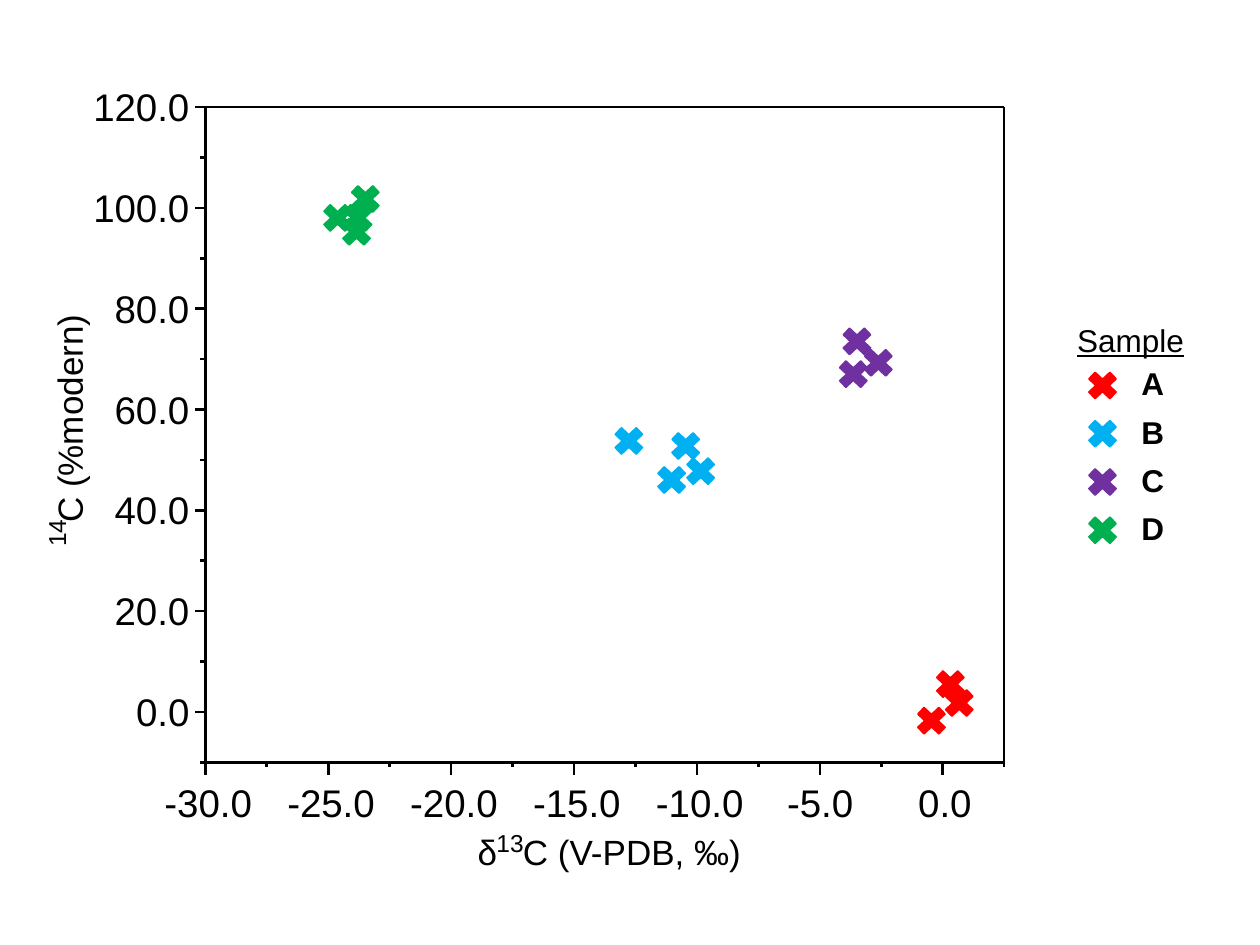
import lxml.etree
import pptx
import pptx.dml.color
import pptx.enum.shapes
import pptx.oxml.ns
import pptx.util

INCH = pptx.util.Inches
SHAPES = pptx.enum.shapes

# Axis ranges: low, high
SPAN_X = (-30, 2.5)
SPAN_Y = (-10, 120)

# Sample name, colour, points as (d13C, 14C)
SAMPLES = [
    ("A", "FF0000", [(-0.46, -1.75), (0.31, 5.5), (0.67, 1.75)]),
    ("B", "00B0F0", [(-11.03, 46), (-10.46, 52.75), (-9.85, 47.75), (-12.77, 53.75)]),
    ("C", "7030A0", [(-3.49, 73.5), (-2.62, 69.25), (-3.64, 67)]),
    ("D", "00B050", [(-24.62, 98), (-23.85, 95.25), (-23.79, 98), (-23.49, 101.75)]),
]


def paint(color, code):
    color.rgb = pptx.dml.color.RGBColor.from_string(code)


def add_run(para, text, size, bold=False, under=False):
    run = para.add_run()
    run.text = text
    font = run.font
    font.name, font.size = "Arial", pptx.util.Pt(size)
    font.bold, font.underline = bold, under
    paint(font.color, "000000")


def add_box(parts, box, inset=0):
    shape = parts.add_textbox(*map(INCH, box))
    frame = shape.text_frame
    frame.word_wrap = True
    frame.margin_left = frame.margin_right = INCH(inset)
    frame.margin_top = frame.margin_bottom = INCH(inset / 2)
    return shape


def add_label(parts, box, text, size, turn=0):
    shape = add_box(parts, box)
    shape.rotation = turn
    add_run(shape.text_frame.paragraphs[0], text, size)


def add_line(parts, x1, y1, x2, y2):
    line = parts.add_connector(SHAPES.MSO_CONNECTOR.STRAIGHT, *map(INCH, (x1, y1, x2, y2)))
    paint(line.line.color, "000000")
    line.line.width = pptx.util.Pt(1.5)
    lxml.etree.SubElement(line._element.spPr, pptx.oxml.ns.qn("a:effectLst"))


def add_mark(parts, x, y, code):
    wide, high = 0.32, 0.3
    mark = parts.add_shape(SHAPES.MSO_SHAPE.MATH_MULTIPLY, INCH(x - wide / 2),
                           INCH(y - high / 2), INCH(wide), INCH(high))
    mark.shadow.inherit = False
    mark.fill.solid()
    paint(mark.fill.fore_color, code)
    paint(mark.line.color, code)
    mark.line.width = pptx.util.Pt(1)


def scale_x(box, value):
    return box[0] + box[2] * (value - SPAN_X[0]) / (SPAN_X[1] - SPAN_X[0])


def scale_y(box, value):
    return box[1] + box[3] * (SPAN_Y[1] - value) / (SPAN_Y[1] - SPAN_Y[0])


def draw_axes(parts, box):
    left, top, wide, high = box
    right, base = left + wide, top + high

    # Frame
    for y in (base, top):
        add_line(parts, left, y, right, y)
    for x in (left, right):
        add_line(parts, x, base, x, top)

    # Horizontal axis: minor ticks halfway between major ones
    for value in range(-30, 5, 5):
        x, minor = scale_x(box, value), scale_x(box, value + 2.5)
        add_line(parts, x, base, x, base + 0.1)
        add_line(parts, minor, base, minor, base + 0.04)
        text = f"{value:.1f}"
        size = len(text)
        add_label(parts, (x - 0.065 * size, base + 0.13, 0.14 * size + 0.13, 0.41), text, 22)

    # Vertical axis
    for value in range(0, 140, 20):
        y, minor = scale_y(box, value), scale_y(box, value - 10)
        add_line(parts, left, y, left - 0.08, y)
        add_line(parts, left, minor, left - 0.04, minor)
        text = f"{value:.1f}"
        room = 0.17 * len(text) + 0.04
        add_label(parts, (left - room, y - 0.19, room, 0.41), text, 22)

    # Axis titles
    add_label(parts, (left - 1.29, top + 3.18, 0.3, 0.32), "14", 14, 270)
    add_label(parts, (left - 2.02, top + 2.13, 1.94, 0.4), "C (%modern)", 20, 270)
    add_label(parts, (left + 2.16, base + 0.54, 0.17, 0.34), "δ", 20)
    add_label(parts, (left + 2.31, base + 0.52, 0.3, 0.32), "13", 14)
    add_label(parts, (left + 2.52, base + 0.54, 1.99, 0.41), "C (V-PDB, ‰)", 20)


def draw_points(parts, box):
    for name, code, points in SAMPLES:
        for x, y in points:
            add_mark(parts, scale_x(box, x), scale_y(box, y), code)


def draw_legend(parts, box):
    left, top = box[:2]
    frame = add_box(parts, box, 0.1).text_frame
    head = frame.paragraphs[0]
    head._p.get_or_add_pPr().set("marL", str(INCH(0.49)))
    head.space_after = pptx.util.Pt(3)
    add_run(head, "Sample", 18, under=True)
    for row, (name, code, points) in enumerate(SAMPLES):
        para = frame.add_paragraph()
        para._p.get_or_add_pPr().set("marL", str(INCH(1)))
        para.space_after = pptx.util.Pt(6)
        add_run(para, name, 18, bold=True)
        add_mark(parts, left + 0.79, top + 0.56 + 0.383 * row, code)


def main():
    deck = pptx.Presentation()
    deck.slide_width, deck.slide_height = INCH(10), INCH(7.5)
    slide = deck.slides.add_slide(deck.slide_layouts[6])
    plot = (1.63, 0.85, 6.34, 5.2)
    draw_axes(slide.shapes.add_group_shape().shapes, plot)
    draw_legend(slide.shapes.add_group_shape().shapes, (7.96, 2.5, 1.55, 1.91))
    draw_points(slide.shapes, plot)
    deck.save("out.pptx")


if __name__ == "__main__":
    main()
